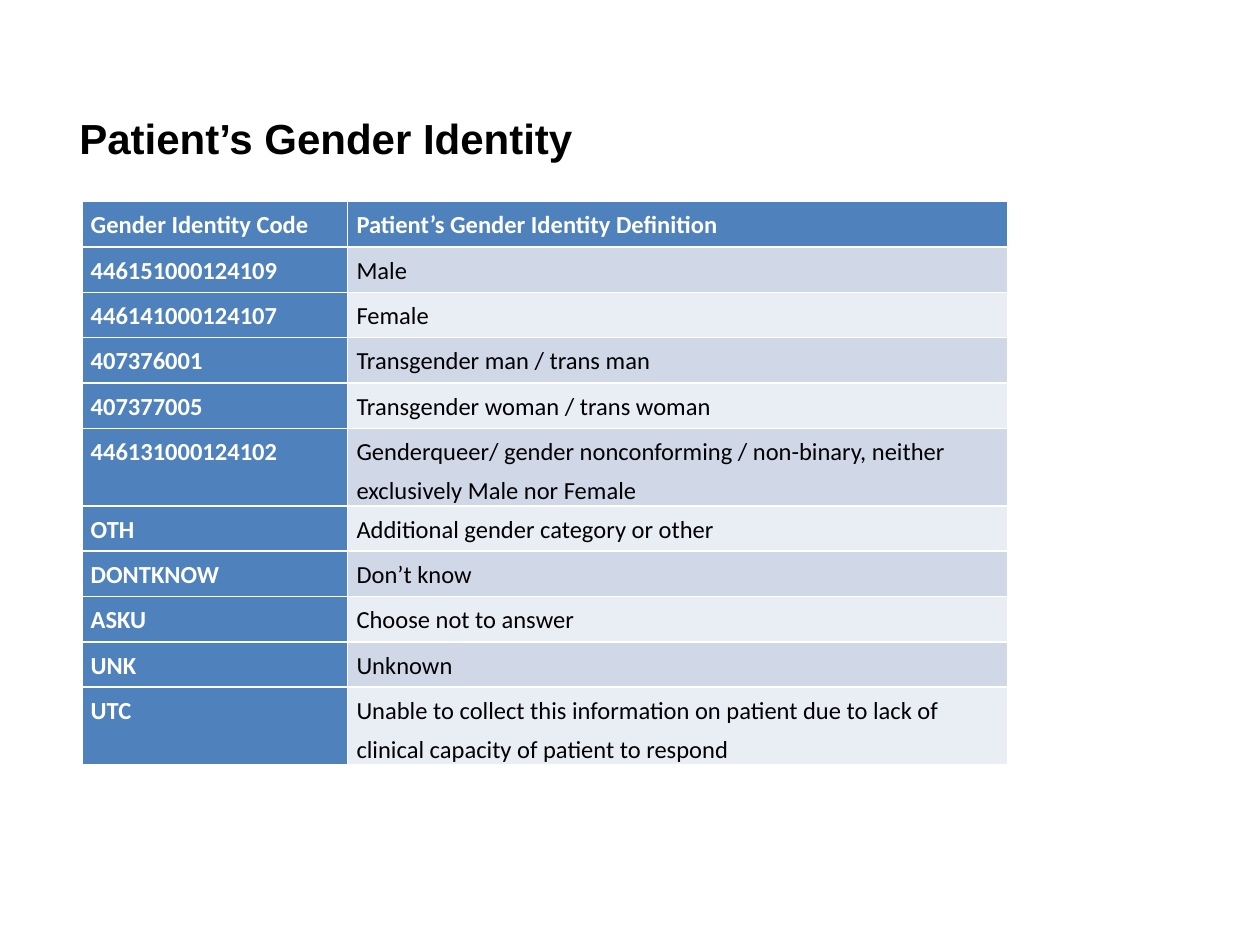
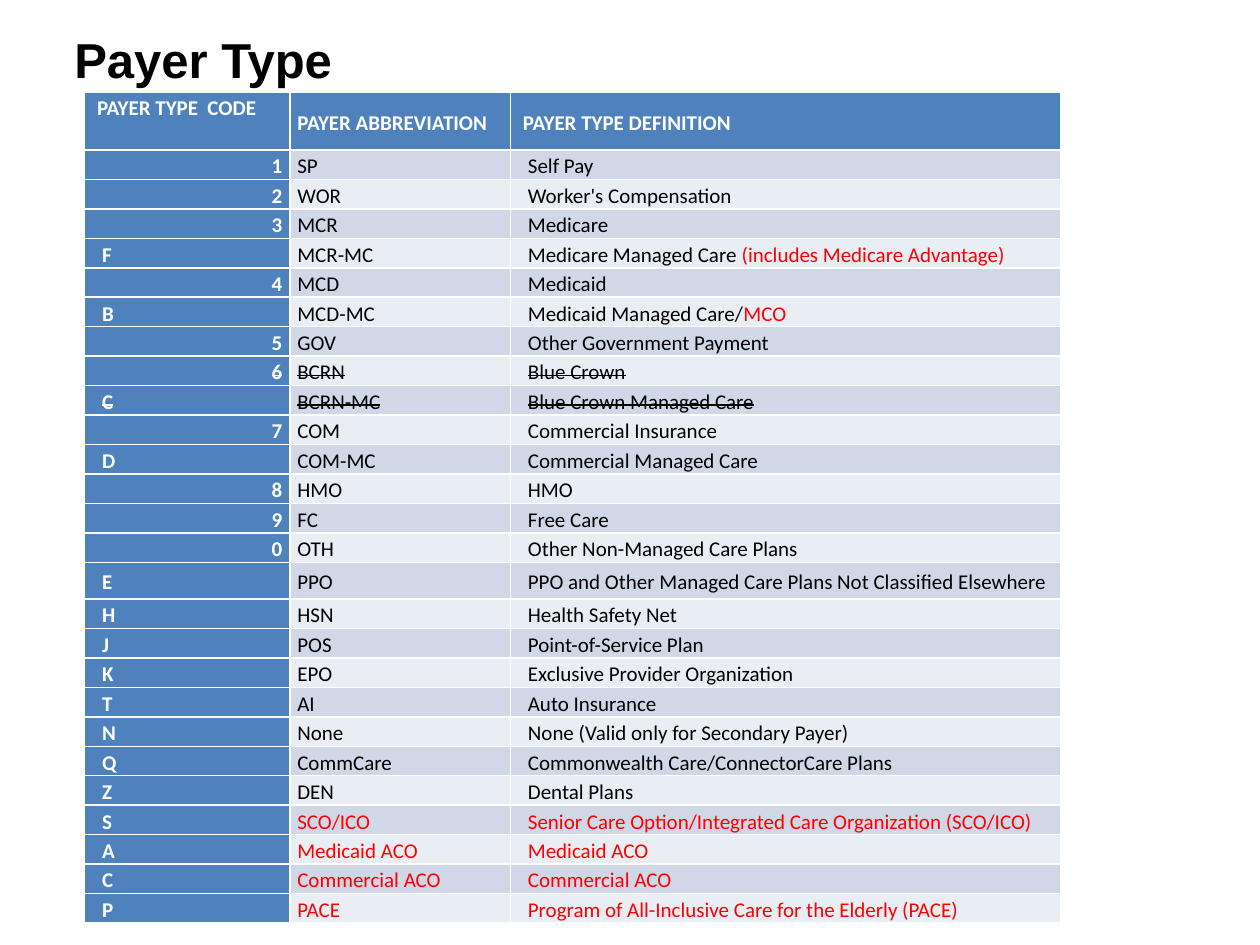
import pptx
import pptx.dml.color
import pptx.enum.text
import pptx.util

Inches = pptx.util.Inches
Pt = pptx.util.Pt
ALIGN = pptx.enum.text.PP_ALIGN
ANCHOR = pptx.enum.text.MSO_ANCHOR

TITLE_ONLY = 5
BLACK, WHITE, RED = "000000", "FFFFFF", "FF0000"
HEADER_FILL = "4F81BD"
BAND_FILLS = ("D0D8E8", "E9EDF4")

GENDER_HEADINGS = ("Gender Identity Code", "Patient’s Gender Identity Definition")
GENDER_ROWS = (
    ("446151000124109", "Male"),
    ("446141000124107", "Female"),
    ("407376001", "Transgender man / trans man"),
    ("407377005", "Transgender woman / trans woman"),
    ("446131000124102", "Genderqueer/ gender nonconforming / non-binary, "
                        "neither exclusively Male nor Female"),
    ("OTH", "Additional gender category or other"),
    ("DONTKNOW", "Don’t know"),
    ("ASKU", "Choose not to answer"),
    ("UNK", "Unknown"),
    ("UTC", "Unable to collect this information on patient due to lack of "
            "clinical capacity of patient to respond"),
)

PAYER_HEADINGS = ("PAYER TYPE  CODE", "PAYER ABBREVIATION", "PAYER TYPE DEFINITION")
CURRENT_PAYERS = (
    ("1", "SP", "Self Pay"),
    ("2", "WOR", "Worker's Compensation"),
    ("3", "MCR", "Medicare"),
    ("F", "MCR-MC", "Medicare Managed Care ", "(includes Medicare Advantage)"),
    ("4", "MCD", "Medicaid"),
    ("B", "MCD-MC", "Medicaid Managed Care/", "MCO"),
    ("5", "GOV", "Other Government Payment"),
)
RETIRED_PAYERS = (
    ("6", "BCRN", "Blue Crown"),
    ("C", "BCRN-MC", "Blue Crown Managed Care"),
)
OTHER_PAYERS = (
    ("7", "COM", "Commercial Insurance"),
    ("D", "COM-MC", "Commercial Managed Care"),
    ("8", "HMO", "HMO"),
    ("9", "FC", "Free Care"),
    ("0", "OTH", "Other Non-Managed Care Plans"),
    ("E", "PPO", "PPO and Other Managed Care Plans Not Classified Elsewhere"),
    ("H", "HSN", "Health Safety Net"),
    ("J", "POS", "Point-of-Service Plan"),
    ("K", "EPO", "Exclusive Provider Organization"),
    ("T", "AI", "Auto Insurance"),
    ("N", "None", "None (Valid only for Secondary Payer)"),
    ("Q", "CommCare", "Commonwealth Care/ConnectorCare Plans"),
    ("Z", "DEN", "Dental Plans"),
)
NEW_PAYERS = (
    ("S", "SCO/ICO", "Senior Care Option/Integrated Care Organization (SCO/ICO)"),
    ("A", "Medicaid ACO", "Medicaid ACO"),
    ("C", "Commercial ACO", "Commercial ACO"),
    ("P", "PACE", "Program of All-Inclusive Care for the Elderly (PACE)"),
)


def rgb(value):
    return pptx.dml.color.RGBColor.from_string(value)


def apply_format(target, values):
    for name, value in values.items():
        setattr(target, name, value)


def add_run(paragraph, text, color, font_format, strike=False):
    run = paragraph.add_run()
    run.text = text
    apply_format(run.font, font_format)
    run.font.color.rgb = rgb(color)
    if strike:
        run._r.get_or_add_rPr().set("strike", "sngStrike")


def add_titled_slide(presentation, title, size, box, margins):
    slide = presentation.slides.add_slide(presentation.slide_layouts[TITLE_ONLY])
    shape = slide.shapes.title
    names = ("left", "top", "width", "height")
    apply_format(shape, {name: Inches(value) for name, value in zip(names, box)})
    apply_format(shape.text_frame, {"vertical_anchor": ANCHOR.MIDDLE, **margins})
    paragraph = shape.text_frame.paragraphs[0]
    paragraph.alignment = ALIGN.LEFT
    add_run(paragraph, title, BLACK, {"name": "Arial", "size": Pt(size), "bold": True})
    return slide


def add_code_table(slide, left, top, widths, heights):
    shape = slide.shapes.add_table(
        len(heights), len(widths), Inches(left), Inches(top),
        Inches(sum(widths)), Inches(sum(heights)))
    table = shape.table
    table.first_col = True
    for column, width in zip(table.columns, widths):
        column.width = Inches(width)
    for row, height in zip(table.rows, heights):
        row.height = Inches(height)
    return table


def fill_cell(table, row, column, pieces, size, line_spacing, cell_format,
              alignment=ALIGN.LEFT, strike=False):
    is_heading = row == 0 or column == 0
    cell = table.cell(row, column)
    cell.fill.solid()
    cell.fill.fore_color.rgb = rgb(HEADER_FILL if is_heading else BAND_FILLS[(row - 1) % 2])
    apply_format(cell, {"margin_top": 0, "margin_bottom": 0, **cell_format})
    paragraph = cell.text_frame.paragraphs[0]
    apply_format(paragraph, {"alignment": alignment, "line_spacing": line_spacing})
    font_format = {"name": "Calibri", "size": Pt(size), "bold": is_heading}
    for text, color in pieces:
        add_run(paragraph, text, WHITE if is_heading else color, font_format, strike)


def add_gender_slide(presentation):
    slide = add_titled_slide(
        presentation, "Patient’s Gender Identity", 24, (0.25, 0.38, 8.79, 0.98),
        {"margin_left": Inches(0.38), "margin_top": Inches(0.49)})
    rows = (GENDER_HEADINGS, *GENDER_ROWS)
    table = add_code_table(slide, 0.65, 1.6, (2.11, 5.24), [0.36] * len(rows))
    cell_format = {"margin_left": Inches(0.07), "margin_right": Inches(0.07)}
    for row, texts in enumerate(rows):
        for column, text in enumerate(texts):
            fill_cell(table, row, column, [(text, BLACK)], 14, 1.3, cell_format)


def payer_cell_format(row, column):
    indent = 0.06
    if column != 1:
        indent = 0.1 if row == 0 else 0.14
    return {
        "margin_left": Inches(indent),
        "margin_right": Inches(0.06),
        "vertical_anchor": ANCHOR.TOP if row == column == 0 else ANCHOR.MIDDLE,
    }


def add_payer_slide(presentation):
    slide = add_titled_slide(presentation, "Payer Type", 28, (0.49, 0.12, 8.79, 0.69), {})
    rows = (PAYER_HEADINGS, *CURRENT_PAYERS, *RETIRED_PAYERS, *OTHER_PAYERS, *NEW_PAYERS)
    heights = [0.46] + [0.29 if texts[0] == "E" else 0.23 for texts in rows[1:]]
    table = add_code_table(slide, 0.67, 0.73, (1.63, 1.75, 4.37), heights)
    for row, (code, abbreviation, definition, *addition) in enumerate(rows):
        color = RED if rows[row] in NEW_PAYERS else BLACK
        strike = rows[row] in RETIRED_PAYERS
        definition_pieces = [(definition, color)] + [(text, RED) for text in addition]
        columns = ([(code, color)], [(abbreviation, color)], definition_pieces)
        for column, pieces in enumerate(columns):
            is_number = column == 0 and code.isdigit()
            fill_cell(table, row, column, pieces, 12, 1.15, payer_cell_format(row, column),
                      ALIGN.RIGHT if is_number else ALIGN.LEFT, strike)


def main():
    presentation = pptx.Presentation()
    apply_format(presentation, {"slide_width": Inches(10), "slide_height": Inches(7.5)})
    add_gender_slide(presentation)
    add_payer_slide(presentation)
    presentation.save("out.pptx")


if __name__ == "__main__":
    main()
